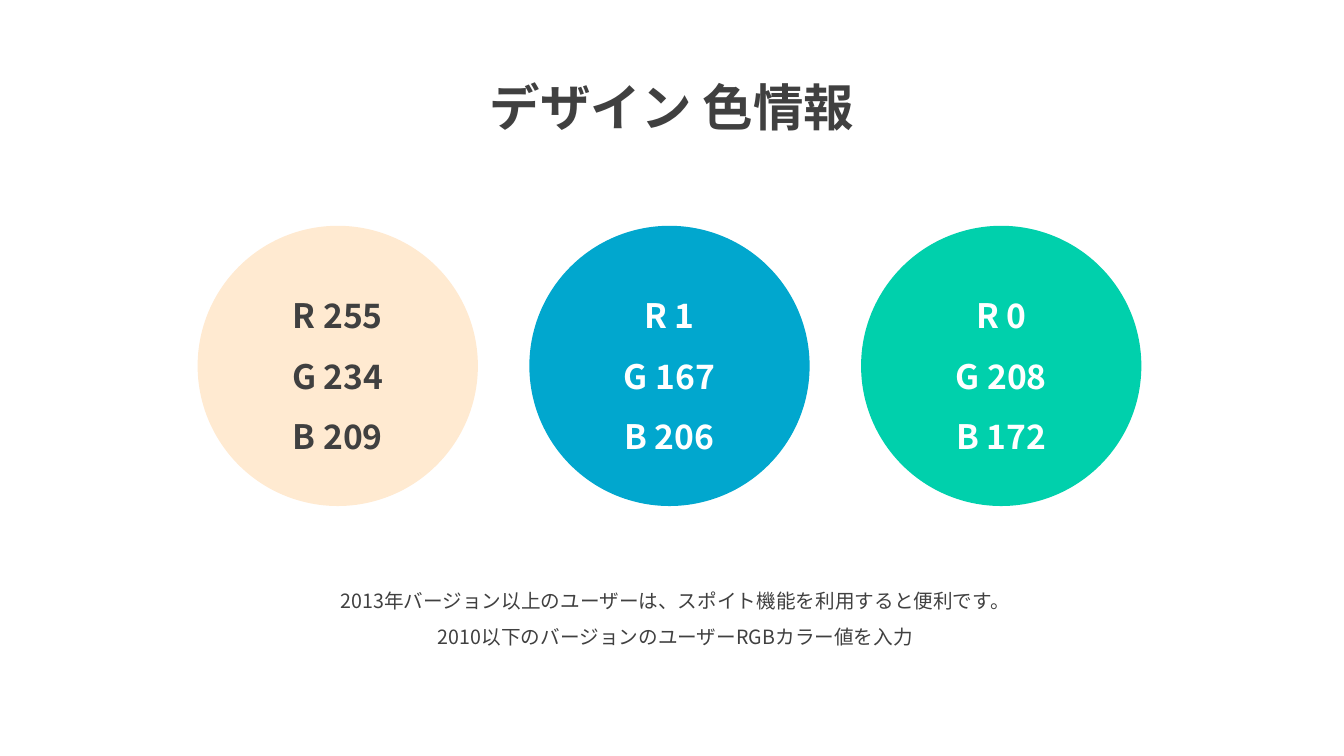
from lxml import etree
from pptx import Presentation
from pptx.dml.color import RGBColor
from pptx.enum import shapes, text
from pptx.oxml import ns
from pptx.util import Inches, Pt

FONT = "Noto Sans CJK KR"
DARK = RGBColor(0x40, 0x40, 0x40)
WHITE = RGBColor(0xFF, 0xFF, 0xFF)
PEACH = RGBColor(0xFF, 0xEA, 0xD1)
BLUE = RGBColor(0x01, 0xA7, 0xCE)
GREEN = RGBColor(0x00, 0xD0, 0xAC)

SWATCHES = [(PEACH, DARK), (BLUE, WHITE), (GREEN, WHITE)]
ADVICE = [
    "2013年バージョン以上のユーザーは、スポイト機能を利用すると便利です。",
    "2010以下のバージョンのユーザーRGBカラー値を入力",
]


def write(frame, lines, size, color=DARK, bold=False, anchor=text.MSO_ANCHOR.TOP):
    """Fill a text frame with centred lines in one format."""
    frame.word_wrap = True
    frame.auto_size = text.MSO_AUTO_SIZE.NONE
    frame.vertical_anchor = anchor
    for index, line in enumerate(lines):
        paragraph = frame.add_paragraph() if index else frame.paragraphs[0]
        paragraph.alignment = text.PP_ALIGN.CENTER
        paragraph.line_spacing = 1.5
        run = paragraph.add_run()
        run.text = line
        font = run.font
        font.name, font.size, font.bold = FONT, Pt(size), bold
        font.color.rgb = color
        east_asian = etree.SubElement(run._r.get_or_add_rPr(), ns.qn("a:ea"))
        east_asian.set("typeface", FONT)


def add_heading(slide, left, top, width, height):
    """Place the slide title in the given box."""
    heading = slide.shapes.title
    heading.left, heading.top = left, top
    heading.width, heading.height = width, height
    write(heading.text_frame, ["デザイン 色情報"], 36, bold=True)


def add_swatches(slide, left, top, width, diameter):
    """Spread the colour circles evenly across the given box."""
    step = (width - diameter) // (len(SWATCHES) - 1)
    for index, (fill, ink) in enumerate(SWATCHES):
        circle = slide.shapes.add_shape(
            shapes.MSO_SHAPE.OVAL, left + index * step, top, diameter, diameter)
        circle.shadow.inherit = False
        circle.fill.solid()
        circle.fill.fore_color.rgb = fill
        circle.line.fill.background()
        channels = [f"{name} {value}" for name, value in zip("RGB", fill)]
        write(circle.text_frame, channels, 24, color=ink, bold=True,
              anchor=text.MSO_ANCHOR.MIDDLE)


def add_advice(slide, left, top, width, height):
    """Place the advice lines in the given box."""
    advice = slide.shapes.add_textbox(left, top, width, height)
    write(advice.text_frame, ADVICE, 14)


def main():
    """Build and save the colour information slide."""
    deck = Presentation()
    deck.slide_width, deck.slide_height = Inches(13.33), Inches(7.5)
    slide = deck.slides.add_slide(deck.slide_layouts.get_by_name("Title Only"))
    add_heading(slide, Inches(4.24), Inches(0.4), Inches(4.85), Inches(0.91))
    add_swatches(slide, Inches(1.96), Inches(2.24), Inches(9.36), Inches(2.78))
    add_advice(slide, Inches(2.52), Inches(5.68), Inches(8.36), Inches(0.77))
    deck.save("out.pptx")


if __name__ == "__main__":
    main()
